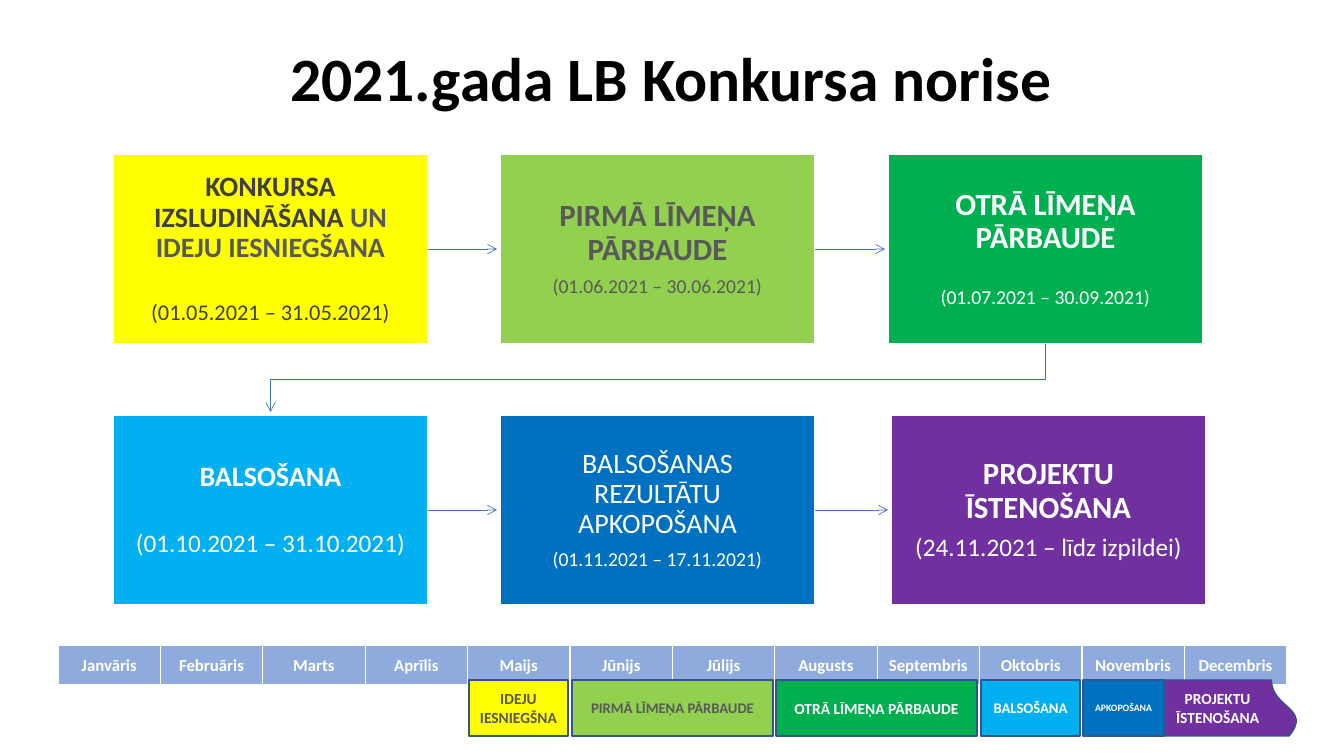
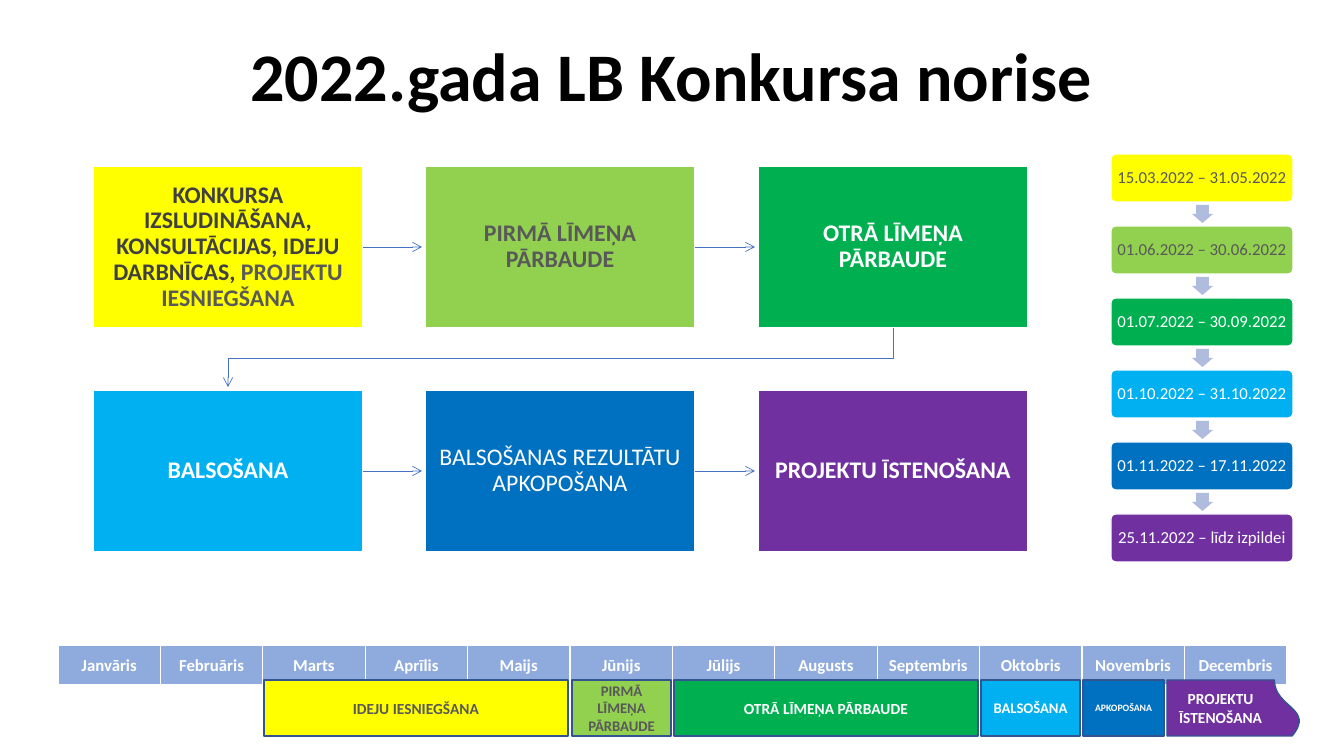
from lxml.etree import SubElement
from pptx import Presentation
from pptx.dml.color import RGBColor
from pptx.enum.shapes import MSO_CONNECTOR, MSO_SHAPE
from pptx.enum.text import MSO_ANCHOR, PP_ALIGN
from pptx.oxml.ns import qn
from pptx.util import Pt

PX = 9071
RECT, ROUND = MSO_SHAPE.RECTANGLE, MSO_SHAPE.ROUNDED_RECTANGLE
WAVE, DOWN = MSO_SHAPE.FLOWCHART_DOCUMENT, MSO_SHAPE.DOWN_ARROW
STRAIGHT, ELBOW = MSO_CONNECTOR.STRAIGHT, MSO_CONNECTOR.ELBOW
CENTER, MIDDLE = PP_ALIGN.CENTER, MSO_ANCHOR.MIDDLE
FONT = "Calibri"
BLACK, WHITE, DARK, GRAY = "000000", "FFFFFF", "404040", "595959"
YELLOW, LIME, GREEN = "FFFF00", "92D050", "00B050"
SKY, BLUE, PURPLE = "00B0F0", "0070C0", "7030A0"
ARROW, BAR_LINE, HEADER, PALE = "4472C4", "325491", "8FAADC", "B0BCDE"
FILLS = [YELLOW, LIME, GREEN, SKY, BLUE, PURPLE]
INKS = [GRAY, GRAY, WHITE, WHITE, WHITE, WHITE]
MONTHS = ["Janvāris", "Februāris", "Marts", "Aprīlis", "Maijs", "Jūnijs", "Jūlijs",
          "Augusts", "Septembris", "Oktobris", "Novembris", "Decembris"]
TABLE_X, TABLE_W, BAR_Y, BAR_H, GAP = 58, 1229, 680, 56, 3
rgb = RGBColor.from_string


def add_box(s, kind, x, y, w, h, fill, line=None, inset=None):
    sp = s.shapes.add_shape(kind, x * PX, y * PX, w * PX, h * PX)
    sp.shadow.inherit = False
    sp.fill.solid()
    sp.fill.fore_color.rgb = rgb(fill)
    if line:
        sp.line.color.rgb = rgb(line)
        sp.line.width = Pt(1)
    else:
        sp.line.fill.background()
    tf = sp.text_frame
    tf.word_wrap = True
    tf.vertical_anchor = MIDDLE
    if inset is not None:
        tf.margin_left = tf.margin_right = tf.margin_top = tf.margin_bottom = inset * PX
    return sp


def write(tf, text, size, color, bold=True, spacing=None, after=0, join=False):
    p = tf.paragraphs[-1]
    if p.runs and not join:
        p = tf.add_paragraph()
    p.alignment = CENTER
    p.space_after = Pt(after)
    if spacing:
        p.line_spacing = spacing
    r = p.add_run()
    r.text = text
    r.font.name = FONT
    r.font.size = Pt(size)
    r.font.bold = bold
    r.font.color.rgb = rgb(color)


slides = [
    {
        "title": "2021.gada LB Konkursa norise", "title_size": 44, "title_y": 30, "title_h": 103,
        "xs": [113, 500, 888, 113, 500, 891], "ys": [154, 415], "size": (315, 190), "inset": 16,
        "steps": [
            [dict(text="KONKURSA IZSLUDINĀŠANA ", size=20, color=DARK),
             dict(text="UN IDEJU IESNIEGŠANA", size=20, color=GRAY, join=True, after=27),
             dict(text="(01.05.2021 – 31.05.2021)", size=16, color=DARK, bold=False)],
            [dict(text="PIRMĀ LĪMEŅA PĀRBAUDE", size=22, color=GRAY, after=7),
             dict(text="(01.06.2021 – 30.06.2021)", size=14, color=GRAY, bold=False)],
            [dict(text="OTRĀ LĪMEŅA PĀRBAUDE", size=22, color=WHITE, after=23),
             dict(text="(01.07.2021 – 30.09.2021)", size=14, color=WHITE, bold=False)],
            [dict(text="BALSOŠANA", size=20, color=WHITE, after=27),
             dict(text="(01.10.2021 – 31.10.2021)", size=18, color=WHITE, bold=False)],
            [dict(text="BALSOŠANAS REZULTĀTU APKOPOŠANA", size=20, color=WHITE, bold=False, after=7),
             dict(text="(01.11.2021 – 17.11.2021)", size=14, color=WHITE, bold=False)],
            [dict(text="PROJEKTU ĪSTENOŠANA", size=22, color=WHITE, after=7),
             dict(text="(24.11.2021 – līdz izpildei)", size=18, color=WHITE, bold=False)],
        ],
        "dates": [],
        "bars": [("IDEJU IESNIEGŠNA", 4, 1), ("PIRMĀ LĪMEŅA PĀRBAUDE", 5, 2),
                 ("OTRĀ LĪMEŅA PĀRBAUDE", 7, 2), ("BALSOŠANA", 9, 1)],
        "wave_x": 1164,
    },
    {
        "title": "2022.gada LB Konkursa norise", "title_size": 48.6, "title_y": 40, "title_h": 79,
        "xs": [93, 425, 758] * 2, "ys": [166, 390], "size": (270, 162), "inset": 13,
        "steps": [
            [dict(text="KONKURSA IZSLUDINĀŠANA, KONSULTĀCIJAS, IDEJU DARBNĪCAS, ", size=17, color=DARK),
             dict(text="PROJEKTU IESNIEGŠANA", size=17, color=GRAY, join=True)],
            [dict(text="PIRMĀ LĪMEŅA PĀRBAUDE", size=17, color=GRAY)],
            [dict(text="OTRĀ LĪMEŅA PĀRBAUDE", size=17, color=WHITE)],
            [dict(text="BALSOŠANA", size=17, color=WHITE)],
            [dict(text="BALSOŠANAS REZULTĀTU APKOPOŠANA", size=17, color=WHITE, bold=False)],
            [dict(text="PROJEKTU ĪSTENOŠANA", size=17, color=WHITE)],
        ],
        "dates": ["15.03.2022 – 31.05.2022", "01.06.2022 – 30.06.2022", "01.07.2022 – 30.09.2022",
                  "01.10.2022 – 31.10.2022", "01.11.2022 – 17.11.2022", "25.11.2022 – līdz izpildei"],
        "bars": [("IDEJU IESNIEGŠANA", 2, 3), ("PIRMĀ LĪMEŅA PĀRBAUDE", 5, 1),
                 ("OTRĀ LĪMEŅA PĀRBAUDE", 6, 3), ("BALSOŠANA", 9, 1)],
        "wave_x": 1167,
    },
]
BAR_SIZES = [11, 10.5, 11, 10.5]

prs = Presentation()
prs.slide_width = 1344 * PX
prs.slide_height = 756 * PX

for d in slides:
    s = prs.slides.add_slide(prs.slide_layouts[6])
    tb = s.shapes.add_textbox(92 * PX, d["title_y"] * PX, 1159 * PX, d["title_h"] * PX)
    tf = tb.text_frame
    tf.word_wrap = True
    tf.vertical_anchor = MIDDLE
    write(tf, d["title"], d["title_size"], BLACK, spacing=0.9)

    w, h = d["size"]
    boxes = []
    for i, step in enumerate(d["steps"]):
        sp = add_box(s, RECT, d["xs"][i], d["ys"][i // 3], w, h, FILLS[i], WHITE, d["inset"])
        for part in step:
            write(sp.text_frame, spacing=0.9, **part)
        boxes.append(sp)

    arrows = []
    for i in (0, 1, 3, 4):
        a, b = boxes[i], boxes[i + 1]
        y = a.top + a.height // 2
        c = s.shapes.add_connector(STRAIGHT, a.left + a.width, y, b.left - GAP * PX, y)
        c.begin_connect(a, 3)
        arrows.append(c)

    a, b = boxes[2], boxes[3]
    top, bottom = a.top + a.height, b.top - GAP * PX
    left, right = b.left + b.width // 2, a.left + a.width // 2
    drop, run = bottom - top, right - left
    x, y = (left + right - drop) // 2, (top + bottom - run) // 2
    c = s.shapes.add_connector(ELBOW, x, y, x + drop, y + run)
    spPr = c._element.spPr
    spPr.find(qn("a:xfrm")).set("rot", "5400000")
    avLst = spPr.find(qn("a:prstGeom")).find(qn("a:avLst"))
    SubElement(avLst, qn("a:gd"), name="adj1", fmla="val 52000")
    arrows.append(c)

    for c in arrows:
        c.line.color.rgb = rgb(ARROW)
        c.line.width = Pt(0.5)
        spPr = c._element.spPr
        SubElement(spPr.find(qn("a:ln")), qn("a:tailEnd"), type="arrow")
        SubElement(spPr, qn("a:effectLst"))

    for i, date in enumerate(d["dates"]):
        y = 154 + 72 * i
        sp = add_box(s, ROUND, 1111, y, 182, 48, FILLS[i], WHITE, 4)
        sp.adjustments[0] = 0.1
        write(sp.text_frame, date, 12, INKS[i], bold=False, spacing=0.9)
        if i < len(d["dates"]) - 1:
            sp = add_box(s, DOWN, 1192, y + 51, 21, 18, PALE)
            sp.adjustments[0] = 0.6
            sp.adjustments[1] = 0.5

    gf = s.shapes.add_table(1, len(MONTHS), TABLE_X * PX, 645 * PX, TABLE_W * PX, 41 * PX)
    for i, month in enumerate(MONTHS):
        cell = gf.table.cell(0, i)
        cell.vertical_anchor = MIDDLE
        write(cell.text_frame, month, 12, WHITE)
        tcPr = cell._tc.get_or_add_tcPr()
        for side, width in (("L", 1), ("R", 1), ("T", 1), ("B", 3)):
            ln = SubElement(tcPr, qn("a:ln" + side), w=str(Pt(width)))
            SubElement(SubElement(ln, qn("a:solidFill")), qn("a:srgbClr"), val=WHITE)
        cell.fill.solid()
        cell.fill.fore_color.rgb = rgb(HEADER)

    for i, (text, start, span) in enumerate(d["bars"]):
        x = TABLE_X + 2 + TABLE_W * start // 12
        sp = add_box(s, RECT, x, BAR_Y, TABLE_W * span // 12 - GAP, BAR_H, FILLS[i], BAR_LINE)
        write(sp.text_frame, text, BAR_SIZES[i], INKS[i])

    length = 134
    shift = (length - BAR_H) // 2
    sp = add_box(s, WAVE, d["wave_x"] + shift, BAR_Y - shift, BAR_H, length, PURPLE, BAR_LINE)
    sp.rotation = 270
    sp.text_frame._txBody.bodyPr.set("vert", "vert")
    write(sp.text_frame, "PROJEKTU ĪSTENOŠANA", 11, WHITE)
    sp = add_box(s, RECT, 1083, BAR_Y, 81, BAR_H, BLUE, BAR_LINE)
    write(sp.text_frame, "APKOPOŠANA", 7, WHITE)

prs.save("out.pptx")
